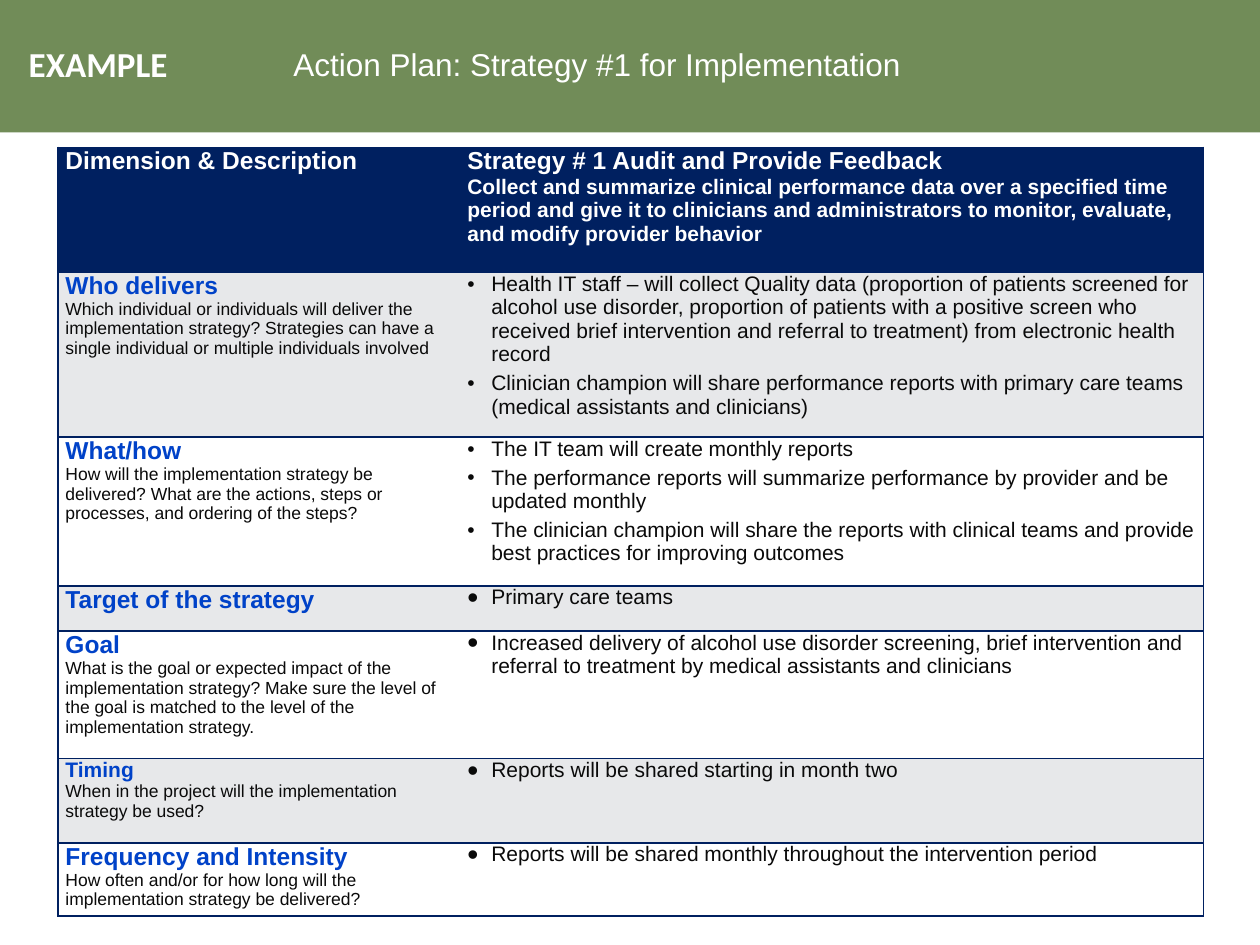
from dataclasses import dataclass

from lxml.etree import SubElement
from pptx import Presentation
from pptx.dml.color import RGBColor
from pptx.enum.shapes import MSO_SHAPE
from pptx.enum.text import MSO_ANCHOR, PP_ALIGN
from pptx.oxml.ns import qn
from pptx.util import Inches, Pt


@dataclass(frozen=True)
class Theme:
    green: RGBColor = RGBColor.from_string("718C58")
    navy: RGBColor = RGBColor.from_string("002060")
    blue: RGBColor = RGBColor.from_string("0042C8")
    ink: RGBColor = RGBColor.from_string("0A0A0A")
    gray: RGBColor = RGBColor.from_string("E7E8EA")
    white: RGBColor = RGBColor.from_string("FFFFFF")
    label: int = 20
    title: int = 18
    heading: int = 14
    body: int = 12
    detail: int = 10


theme = Theme()


def write_text(frame, text, size, color, bold=False, font="Arial", indent=0,
               bullet_scale=None, space_after=0):
    """Write one paragraph, filling the frame's first one if it is empty."""
    paragraph = frame.paragraphs[0]
    if paragraph.runs:
        paragraph = frame.add_paragraph()
    paragraph.alignment = PP_ALIGN.LEFT
    paragraph.space_after = Pt(space_after)
    properties = paragraph._p.get_or_add_pPr()
    properties.set("marL", str(Inches(indent)))
    if bullet_scale:
        properties.set("indent", str(-Inches(indent)))
        SubElement(properties, qn("a:buSzPct"), val=str(bullet_scale * 1000))
        SubElement(properties, qn("a:buFont"), typeface="Arial")
        SubElement(properties, qn("a:buChar"), char="•")
    run = paragraph.add_run()
    run.text = text
    run.font.name = font
    run.font.size = Pt(size)
    run.font.bold = bold
    run.font.color.rgb = color


def set_borders(cell, open_side):
    """Draw navy cell borders on every side except the open one."""
    cell_properties = cell._tc.get_or_add_tcPr()
    for side in ("lnL", "lnR", "lnT", "lnB"):
        line = SubElement(cell_properties, qn(f"a:{side}"), w=str(Pt(1)))
        if side == open_side:
            SubElement(line, qn("a:noFill"))
        else:
            fill = SubElement(line, qn("a:solidFill"))
            SubElement(fill, qn("a:srgbClr"), val=str(theme.navy))


presentation = Presentation()
presentation.slide_width = Inches(10)
presentation.slide_height = Inches(7.5)
slide = presentation.slides.add_slide(presentation.slide_layouts[6])

# Header band
band = slide.shapes.add_shape(
    MSO_SHAPE.RECTANGLE, Inches(0), Inches(-0.04), Inches(10), Inches(1.09))
band.shadow.inherit = False
band.fill.solid()
band.fill.fore_color.rgb = theme.green
band.line.fill.background()
band.text_frame.vertical_anchor = MSO_ANCHOR.MIDDLE
write_text(band.text_frame, "EXAMPLE", theme.label, theme.white,
           bold=True, font="Calibri", indent=0.13)

# Action plan: row height, heading, heading size, description, bullets, bullet scale
plan_rows = [
    (1.31, "Who delivers", theme.heading,
     "Which individual or individuals will deliver the implementation strategy? "
     "Strategies can have a single individual or multiple individuals involved",
     ["Health IT staff – will collect Quality data (proportion of patients screened "
      "for alcohol use disorder, proportion of patients with a positive screen who "
      "received brief intervention and referral to treatment) from electronic health "
      "record",
      "Clinician champion will share performance reports with primary care teams "
      "(medical assistants and clinicians)"], 100),
    (1.18, "What/how", theme.heading,
     "How will the implementation strategy be delivered? What are the actions, "
     "steps or processes, and ordering of the steps?",
     ["The IT team will create monthly reports",
      "The performance reports will summarize performance by provider and be "
      "updated monthly",
      "The clinician champion will share the reports with clinical teams and "
      "provide best practices for improving outcomes"], 100),
    (0.36, "Target of the strategy", theme.heading, None,
     ["Primary care teams"], 150),
    (1.01, "Goal", theme.heading,
     "What is the goal or expected impact of the implementation strategy? Make sure "
     "the level of the goal is matched to the level of the implementation strategy.",
     ["Increased delivery of alcohol use disorder screening, brief intervention and "
      "referral to treatment by medical assistants and clinicians"], 150),
    (0.67, "Timing", theme.body,
     "When in the project will the implementation strategy be used?",
     ["Reports will be shared starting in month two"], 150),
    (0.58, "Frequency and Intensity", theme.heading,
     "How often and/or for how long will the implementation strategy be delivered?",
     ["Reports will be shared monthly throughout the intervention period"], 150),
]
row_heights = [0.99] + [row[0] for row in plan_rows]
column_widths = [3.19, 5.9]

# Table grid, fills and borders
table = slide.shapes.add_table(
    len(row_heights), len(column_widths), Inches(0.46), Inches(1.17),
    Inches(sum(column_widths)), Inches(sum(row_heights))).table
for column, width in zip(table.columns, column_widths):
    column.width = Inches(width)
for row_index, height in enumerate(row_heights):
    row = table.rows[row_index]
    row.height = Inches(height)
    row_color = theme.gray if row_index % 2 else theme.white
    for cell, open_side in zip(row.cells, ("lnR", "lnL")):
        cell.margin_left = cell.margin_right = Inches(0.06)
        cell.margin_top = cell.margin_bottom = 0
        set_borders(cell, open_side)
        cell.fill.solid()
        cell.fill.fore_color.rgb = row_color if row_index else theme.navy

# Table header
write_text(table.cell(0, 0).text_frame, "Dimension & Description",
           theme.heading, theme.white, bold=True)
strategy_frame = table.cell(0, 1).text_frame
write_text(strategy_frame, "Strategy # 1 Audit and Provide Feedback",
           theme.heading, theme.white, bold=True)
write_text(strategy_frame,
           "Collect and summarize clinical performance data over a specified time "
           "period and give it to clinicians and administrators to monitor, evaluate, "
           "and modify provider behavior", theme.body, theme.white, bold=True)

# Table body
for row_index, plan_row in enumerate(plan_rows, start=1):
    _, heading, heading_size, description, bullets, bullet_scale = plan_row
    dimension_frame = table.cell(row_index, 0).text_frame
    write_text(dimension_frame, heading, heading_size, theme.blue, bold=True)
    if description:
        write_text(dimension_frame, description, theme.detail, theme.ink)
    for bullet in bullets:
        write_text(table.cell(row_index, 1).text_frame, bullet, theme.body, theme.ink,
                   indent=0.19, bullet_scale=bullet_scale, space_after=3)

# Slide title
title = slide.shapes.add_textbox(Inches(2.23), Inches(0.31), Inches(7.16), Inches(0.4))
title.text_frame.word_wrap = True
write_text(title.text_frame, "Action Plan: Strategy #1 for Implementation",
           theme.title, theme.white)

presentation.save("out.pptx")
